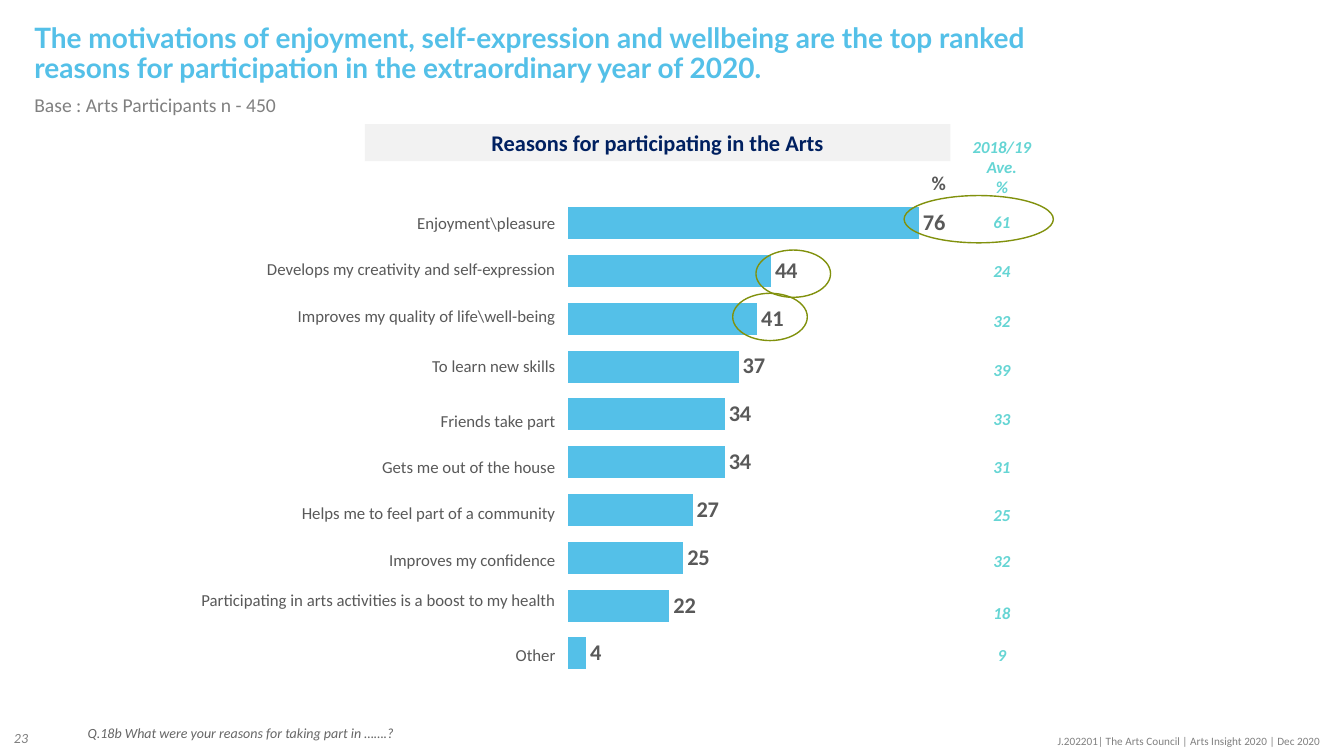
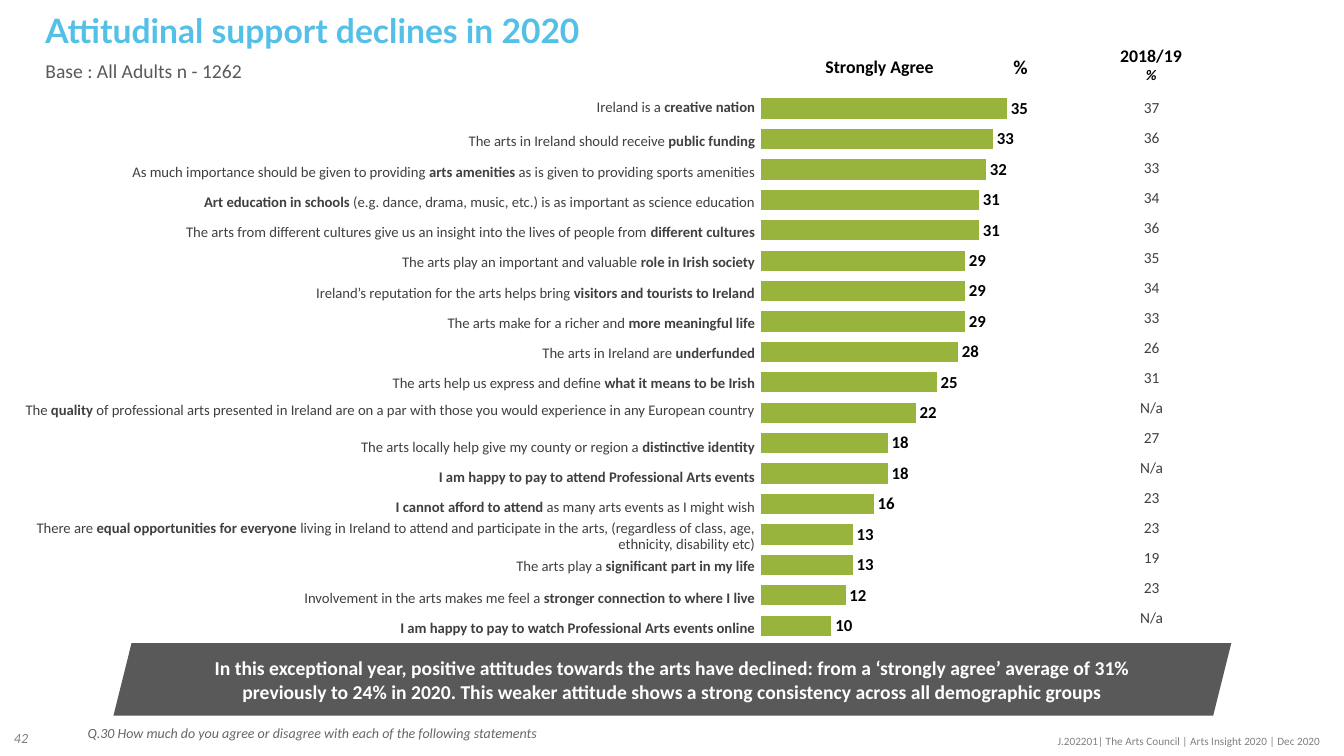
"""Builds two survey slides with ranked bar charts and earlier results beside them."""
from dataclasses import dataclass
from typing import NamedTuple

from lxml import etree
from pptx import Presentation
from pptx import util as u
from pptx.chart import data as chart_data
from pptx.dml import color
from pptx.enum import chart as charts, shapes, text as texts
from pptx.oxml import ns

LEFT, CENTER, RIGHT = texts.PP_ALIGN.LEFT, texts.PP_ALIGN.CENTER, texts.PP_ALIGN.RIGHT
TOP, MIDDLE = texts.MSO_ANCHOR.TOP, texts.MSO_ANCHOR.MIDDLE


@dataclass(frozen=True)
class Theme:
    blue: str = "54C0E8"
    green: str = "99B43C"
    olive: str = "81910D"
    aqua: str = "65D5D4"
    navy: str = "002060"
    black: str = "000000"
    white: str = "FFFFFF"
    ink: str = "404040"
    dark: str = "595959"
    question: str = "666666"
    gray: str = "808080"
    pale: str = "F2F2F2"
    body_font: str = "Calibri"
    title_font: str = "Lato"
    footer: float = 8
    note: float = 10
    statement: float = 10.5
    figure: float = 11
    label: float = 12
    heading: float = 12.7
    lead: float = 14
    band: float = 16
    title: float = 20
    large_title: float = 24


THEME = Theme()


class Box(NamedTuple):
    left: float
    top: float
    width: float
    height: float

    def lengths(self) -> tuple:
        return tuple(u.Pt(value) for value in self)


class Row(NamedTuple):
    text: str
    height: float
    spacing: float = 1.0


@dataclass(frozen=True)
class Page:
    number: str
    title: str
    title_box: Box
    title_size: float
    base: str
    base_box: Box
    base_color: str
    question: str


@dataclass(frozen=True)
class Bars:
    box: Box
    plot: tuple
    values: tuple
    maximum: float
    fill: str
    label_size: float
    label_color: str


REASONS = Page(
    "23",
    "The motivations of enjoyment, self-expression and wellbeing are the top ranked "
    "reasons for participation in the extraordinary year of 2020.",
    Box(17.3, 13.7, 735, 29.5), THEME.title,
    "Base : Arts Participants n - 450", Box(17.3, 64.8, 437, 25.2), THEME.gray,
    "Q.18b What were your reasons for taking part in …….?",
)
REASON_BARS = Bars(
    Box(-4.3, 131.8, 740, 363), (0.554, 0.029, 0.446, 0.941),
    (76, 44, 41, 37, 34, 34, 27, 25, 22, 4), 100, THEME.blue, THEME.band, THEME.dark,
)
REASON_ROWS = (
    Row("Enjoyment\\pleasure", 33.1),
    Row("Develops my creativity and self-expression", 33.1),
    Row("Improves my quality of life\\well-being", 36),
    Row("To learn new skills", 38.9),
    Row("Friends take part", 33.1),
    Row("Gets me out of the house", 33.1),
    Row("Helps me to feel part of a community", 33.1),
    Row("Improves my confidence", 28.8),
    Row("Participating in arts activities is a boost to my health", 39.6),
    Row("Other", 33.1),
)
REASON_HISTORY = (
    Row("2018/19\nAve.\n%", 43.2), Row("61", 35.3), Row("24", 35.3), Row("32", 35.3),
    Row("39", 35.3), Row("33", 33.8), Row("31", 35.3), Row("25", 33.1), Row("32", 32.4),
    Row("18", 42.5), Row("9", 17.3),
)
HIGHLIGHTS = (
    Box(645.8, 139.7, 106.6, 33.8),
    Box(540, 178.6, 53.3, 33.8),
    Box(523.4, 209.5, 53.3, 33.8),
)

ATTITUDES = Page(
    "42",
    "Attitudinal support declines in 2020", Box(25.2, 6.5, 626.4, 29.5), THEME.large_title,
    "Base : All Adults n - 1262", Box(25.2, 40.3, 437, 25.2), THEME.dark,
    "Q.30 How much do you agree or disagree with each of the following statements",
)
ATTITUDE_BARS = Bars(
    Box(303.1, 43.9, 515.5, 439.2), (0.467, 0.052, 0.389, 0.94),
    (35, 33, 32, 31, 31, 29, 29, 29, 28, 25, 22, 18, 18, 16, 13, 13, 12, 10, 0),
    40, THEME.green, THEME.label, THEME.black,
)
ATTITUDE_ROWS = (
    Row("Ireland is a *creative nation*", 24.5),
    Row("The arts in Ireland should receive *public funding*", 21.6),
    Row("As much importance should be given to providing *arts amenities *"
        "as is given to providing sports amenities", 21.6),
    Row("*Art education in schools *(e.g. dance, drama, music, etc.) "
        "is as important as science education", 21.6),
    Row("The arts from different cultures give us an insight into the lives of people "
        "from *different cultures*", 21.6),
    Row("The arts play an important and valuable *role in Irish society*", 21.6),
    Row("Ireland’s reputation for the arts helps bring *visitors and tourists to Ireland*", 21.6),
    Row("The arts make for a richer and *more meaningful life*", 21.6),
    Row("The arts in Ireland are *underfunded*", 21.6),
    Row("The arts help us express and define *what it means to be Irish*", 19.4),
    Row("The *quality* of professional arts presented in Ireland are on a par with those "
        "you would experience in any European country", 25.9),
    Row("The arts locally help give my county or region a *distinctive identity*", 21.6),
    Row("*I am happy to pay to attend Professional Arts events*", 21.6),
    Row("*I cannot afford to attend *as many arts events as I might wish", 15.8),
    Row("There are *equal opportunities for everyone *living in Ireland to attend and "
        "participate in the arts, (regardless of class, age, ethnicity, disability etc)",
        25.9, 0.9),
    Row("The arts play a *significant part in my life*", 23),
    Row("Involvement in the arts makes me feel a *stronger connection to where I live*", 21.6),
    Row("*I am happy to pay to watch Professional Arts events online*", 21.6),
)
ATTITUDE_HISTORY = tuple(
    Row(figure, 21.45)
    for figure in ("37", "36", "33", "34", "36", "35", "34", "33", "26", "31",
                   "N/a", "27", "N/a", "23", "23", "19", "23", "N/a")
)


def rgb(value: str) -> color.RGBColor:
    return color.RGBColor.from_string(value)


def write(frame, text: str, *, size: float, ink: str, font: str = THEME.body_font,
          bold: bool = False, italic: bool = False, align=LEFT, spacing: float = 1.0) -> None:
    for line in text.split("\n"):
        para = frame.add_paragraph() if frame.text else frame.paragraphs[0]
        para.alignment, para.line_spacing, para.space_before = align, spacing, u.Pt(0)
        for index, part in enumerate(line.split("*")):
            if part:
                span = para.add_run()
                span.text = part
                span.font.name, span.font.size = font, u.Pt(size)
                span.font.bold, span.font.italic = bold or index % 2 == 1, italic
                span.font.color.rgb = rgb(ink)


def add_label(page, box: Box, text: str, *, wrap: bool = False, anchor=TOP, **style):
    frame = page.shapes.add_textbox(*box.lengths()).text_frame
    frame.word_wrap, frame.vertical_anchor = wrap, anchor
    write(frame, text, **style)
    return frame


def fill_placeholder(holder, box: Box, text: str, **style) -> None:
    holder.left, holder.top, holder.width, holder.height = box.lengths()
    frame = holder.text_frame
    frame.word_wrap, frame.auto_size = True, texts.MSO_AUTO_SIZE.NONE
    frame.vertical_anchor = TOP
    write(frame, text, spacing=0.9, **style)


def add_page(deck, content: Page):
    page = deck.slides.add_slide(deck.slide_layouts.get_by_name("Comparison"))
    holders = {holder.placeholder_format.idx: holder for holder in page.placeholders}
    for index in (2, 4):
        element = holders[index].element
        element.getparent().remove(element)
    fill_placeholder(holders[0], content.title_box, content.title, size=content.title_size,
                     ink=THEME.blue, font=THEME.title_font, bold=True)
    fill_placeholder(holders[1], content.base_box, content.base, size=THEME.lead,
                     ink=content.base_color)
    fill_placeholder(holders[3], Box(55.4, 515.5, 682.6, 22.3), content.question,
                     size=THEME.note, ink=THEME.question, italic=True)
    add_label(page, Box(2.9, 512.6, 41.8, 28.8), content.number, wrap=True, anchor=MIDDLE,
              size=THEME.note, ink=THEME.gray, italic=True)
    add_label(page, Box(741.6, 520.6, 208.8, 18), wrap=True,
              text="J.202201| The Arts Council | Arts Insight 2020 | Dec 2020",
              size=THEME.footer, ink=THEME.gray, align=RIGHT)
    return page


def add_bars(page, bars: Bars) -> None:
    source = chart_data.CategoryChartData(number_format="0")
    source.categories = [str(rank) for rank in range(1, len(bars.values) + 1)]
    source.add_series("Series 1", bars.values)
    chart = page.shapes.add_chart(charts.XL_CHART_TYPE.BAR_CLUSTERED,
                                  *bars.box.lengths(), source).chart
    chart.has_title = chart.has_legend = False
    chart.font.name, chart.font.size = THEME.body_font, u.Pt(THEME.note)
    chart.font.color.rgb = rgb(THEME.black)
    chart.category_axis.reverse_order = True
    scale = chart.value_axis
    scale.minimum_scale, scale.maximum_scale = 0, bars.maximum
    scale.has_major_gridlines = False
    chart.category_axis.visible = scale.visible = False
    plot = chart.plots[0]
    plot.gap_width, plot.vary_by_categories = 50, False
    fill = plot.series[0].format.fill
    fill.solid()
    fill.fore_color.rgb = rgb(bars.fill)
    plot.has_data_labels = True
    labels = plot.data_labels
    labels.show_value, labels.position = True, charts.XL_LABEL_POSITION.OUTSIDE_END
    labels.number_format, labels.number_format_is_linked = "0;;", False
    labels.font.name, labels.font.size = THEME.body_font, u.Pt(bars.label_size)
    labels.font.bold, labels.font.color.rgb = True, rgb(bars.label_color)
    place_plot(chart, bars.plot)


def place_plot(chart, fractions: tuple) -> None:
    area = chart._chartSpace.find(".//" + ns.qn("c:plotArea"))
    for layout in area.findall(ns.qn("c:layout")):
        area.remove(layout)
    layout = etree.Element(ns.qn("c:layout"))
    manual = etree.SubElement(layout, ns.qn("c:manualLayout"))
    settings = (("layoutTarget", "inner"), ("xMode", "edge"), ("yMode", "edge"),
                *zip("xywh", fractions))
    for name, value in settings:
        etree.SubElement(manual, ns.qn("c:" + name)).set("val", str(value))
    area.insert(0, layout)


def add_column(page, left: float, top: float, width: float, rows: tuple, *,
               anchor=TOP, **style) -> None:
    box = Box(left, top, width, sum(row.height for row in rows))
    table = page.shapes.add_table(len(rows), 1, *box.lengths()).table
    table.first_row = table.horz_banding = False
    for index, row in enumerate(rows):
        table.rows[index].height = u.Pt(row.height)
        cell = table.cell(index, 0)
        cell.fill.background()
        cell.vertical_anchor = anchor
        cell.margin_left = cell.margin_right = cell.margin_top = u.Pt(0.72)
        cell.margin_bottom = u.Pt(0)
        write(cell.text_frame, row.text, spacing=row.spacing, **style)


def add_banner(page, kind, box: Box, fill: str, text: str, **style) -> None:
    shape = page.shapes.add_shape(kind, *box.lengths())
    shape.shadow.inherit = False
    shape.fill.solid()
    shape.fill.fore_color.rgb = rgb(fill)
    shape.line.fill.background()
    frame = shape.text_frame
    frame.word_wrap, frame.vertical_anchor = True, MIDDLE
    frame.margin_left = frame.margin_right = frame.margin_top = frame.margin_bottom = u.Pt(0)
    write(frame, text, bold=True, align=CENTER, **style)


def add_highlight(page, box: Box) -> None:
    ring = page.shapes.add_shape(shapes.MSO_SHAPE.OVAL, *box.lengths())
    ring.shadow.inherit = False
    ring.fill.background()
    ring.line.color.rgb, ring.line.width = rgb(THEME.olive), u.Pt(1)


def build_reasons(deck) -> None:
    page = add_page(deck, REASONS)
    add_bars(page, REASON_BARS)
    add_column(page, 689, 97.2, 53.3, REASON_HISTORY, anchor=MIDDLE, size=THEME.label,
               ink=THEME.aqua, bold=True, italic=True, align=CENTER)
    add_column(page, 119.5, 151.9, 278, REASON_ROWS, size=THEME.label, ink=THEME.dark,
               align=RIGHT)
    for box in HIGHLIGHTS:
        add_highlight(page, box)
    add_banner(page, shapes.MSO_SHAPE.RECTANGLE, Box(260.6, 88.6, 418.3, 26.6), THEME.pale,
               "Reasons for participating in the Arts", size=THEME.band, ink=THEME.navy)
    add_label(page, Box(658, 118.8, 25.2, 24.5), "%", size=THEME.lead, ink=THEME.dark,
              bold=True, align=CENTER)


def build_attitudes(deck) -> None:
    page = add_page(deck, ATTITUDES)
    add_bars(page, ATTITUDE_BARS)
    add_column(page, 4.3, 69.8, 535.7, ATTITUDE_ROWS, size=THEME.statement, ink=THEME.ink,
               align=RIGHT)
    add_column(page, 795.6, 66.2, 54, ATTITUDE_HISTORY, anchor=MIDDLE, size=THEME.figure,
               ink=THEME.ink, align=CENTER)
    heading = dict(ink=THEME.black, bold=True, align=CENTER)
    frame = add_label(page, Box(792.7, 28.1, 59, 35.3), "2018/19", size=THEME.heading, **heading)
    write(frame, "%", size=THEME.statement, italic=True, **heading)
    add_label(page, Box(581.8, 36, 92.9, 22.3), "Strongly Agree", size=THEME.heading, **heading)
    add_label(page, Box(716.4, 36, 25.2, 24.5), "%", size=THEME.lead, **heading)
    add_banner(page, shapes.MSO_SHAPE.PARALLELOGRAM, Box(81, 459.4, 798.5, 51.8), THEME.dark,
               "In this exceptional year, positive attitudes towards the arts have declined: "
               "from a ‘strongly agree’ average of 31% previously to 24% in 2020. This weaker "
               "attitude shows a strong consistency across all demographic groups",
               size=THEME.lead, ink=THEME.white)


def main() -> None:
    deck = Presentation()
    deck.slide_width, deck.slide_height = u.Pt(960), u.Pt(540)
    build_reasons(deck)
    build_attitudes(deck)
    deck.save("out.pptx")


if __name__ == "__main__":
    main()
